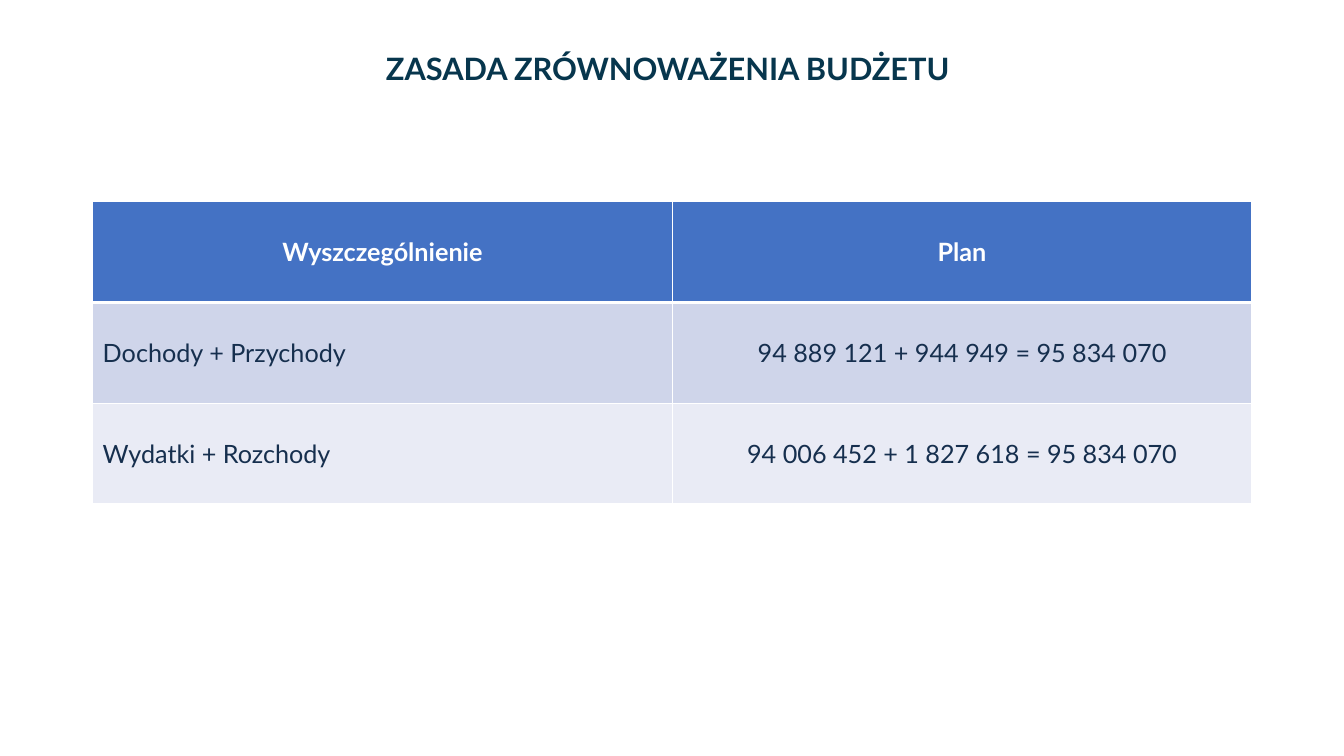
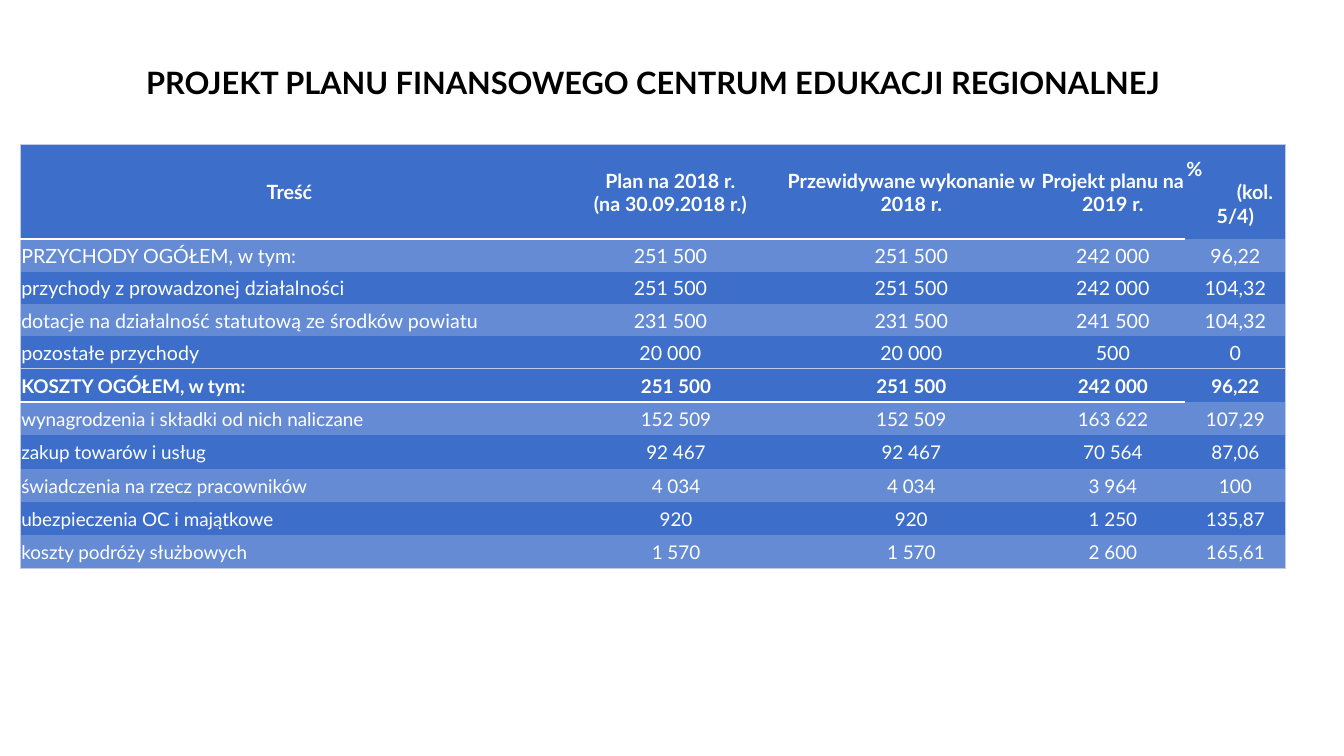
"""Build two budget slides with a title and plain tables."""
from dataclasses import dataclass
from typing import Optional

from lxml import etree
from pptx import Presentation
from pptx.dml.color import RGBColor
from pptx.enum.text import MSO_ANCHOR, PP_ALIGN
from pptx.oxml.ns import qn
from pptx.slide import Slide
from pptx.table import Table, _Cell
from pptx.util import Pt

LEFT, MID = PP_ALIGN.LEFT, PP_ALIGN.CENTER
CORE = MSO_ANCHOR.MIDDLE
FONT = "Lato"
HUES = {
    "white": "FFFFFF",
    "black": "000000",
    "teal": "07364D",
    "navy": "162F4E",
    "blue": "4472C4",
    "lilac": "CFD5EA",
    "pale": "E9EBF5",
    "royal": "3D6EC9",
    "sky": "648BD4",
    "mist": "C1C9E4",
}


@dataclass(frozen=True)
class Edge:
    """Colour and width of a cell border."""
    hue: str
    width: float


@dataclass(frozen=True)
class Title:
    """Heading text, its colour and the centre of its box."""
    text: str
    hue: str
    x: float
    y: float


@dataclass(frozen=True)
class Grid:
    """Place, look and text of a table."""
    left: float
    top: float
    cols: list[float]
    highs: list[float]
    cells: list[list[str]]
    fills: tuple[str, str, str]
    ink: str
    size: float
    rim: Edge
    rule: Edge
    span: int
    inner: Optional[Edge] = None
    inset: Optional[float] = None
    mid: bool = True


def color(name: str) -> RGBColor:
    """Return a named colour."""
    return RGBColor.from_string(HUES[name])


def add_title(slide: Slide, title: Title) -> None:
    """Draw a bold heading centred on its point."""
    width, high = 828, 40
    box = slide.shapes.add_textbox(Pt(title.x - width / 2), Pt(title.y - high / 2), Pt(width), Pt(high))
    frame = box.text_frame
    frame.word_wrap = True
    frame.vertical_anchor = CORE
    para = frame.paragraphs[0]
    para.text = title.text
    para.alignment = MID
    para.font.name, para.font.size, para.font.bold = FONT, Pt(22), True
    para.font.color.rgb = color(title.hue)


def add_edge(cell: _Cell, side: str, edge: Optional[Edge]) -> None:
    """Set one border of a cell, or clear it."""
    line = etree.SubElement(cell._tc.get_or_add_tcPr(), qn(f"a:ln{side}"))
    if edge is None:
        etree.SubElement(line, qn("a:noFill"))
        return
    line.set("w", str(int(Pt(edge.width))))
    fill = etree.SubElement(line, qn("a:solidFill"))
    etree.SubElement(fill, qn("a:srgbClr")).set("val", HUES[edge.hue])


def pick_row(grid: Grid, bound: int, col: int) -> Optional[Edge]:
    """Return the horizontal border at a row boundary."""
    if bound in (0, len(grid.highs)):
        return grid.rim
    return grid.rule if bound == 1 and col < grid.span else grid.inner


def pick_col(grid: Grid, bound: int) -> Optional[Edge]:
    """Return the vertical border at a column boundary."""
    return grid.rim if bound in (0, len(grid.cols)) else grid.inner


def fill_cell(cell: _Cell, grid: Grid, row: int, col: int) -> None:
    """Write and style one cell by its place."""
    add_edge(cell, "L", pick_col(grid, col))
    add_edge(cell, "R", pick_col(grid, col + 1))
    add_edge(cell, "T", pick_row(grid, row, col))
    add_edge(cell, "B", pick_row(grid, row + 1, col))
    cell.fill.solid()
    cell.fill.fore_color.rgb = color(grid.fills[1 + (row - 1) % 2 if row else 0])
    cell.vertical_anchor = CORE
    if grid.inset is not None:
        cell.margin_left = cell.margin_right = cell.margin_top = Pt(grid.inset)
        cell.margin_bottom = 0
    cell.text = grid.cells[row][col]
    for para in cell.text_frame.paragraphs:
        para.alignment = MID if col or (row == 0 and grid.mid) else LEFT
        para.font.name, para.font.size, para.font.bold = FONT, Pt(grid.size), row == 0
        para.font.color.rgb = color(grid.ink if row else "white")


def add_grid(slide: Slide, grid: Grid) -> Table:
    """Draw a table and return it."""
    frame = slide.shapes.add_table(
        len(grid.highs), len(grid.cols), Pt(grid.left), Pt(grid.top),
        Pt(sum(grid.cols)), Pt(sum(grid.highs)))
    table = frame.table
    table.first_row = table.horz_banding = False
    for col, width in enumerate(grid.cols):
        table.columns[col].width = Pt(width)
    for row, high in enumerate(grid.highs):
        table.rows[row].height = Pt(high)
        for col in range(len(grid.cols)):
            fill_cell(table.cell(row, col), grid, row, col)
    return table


def step_text(cell: _Cell) -> None:
    """Stagger the first two lines of the ratio heading."""
    first, second = cell.text_frame.paragraphs[:2]
    first.alignment = second.alignment = LEFT
    props = second._p.get_or_add_pPr()
    props.set("marL", str(int(Pt(36))))
    props.set("indent", "0")


THIN = Edge("white", 1)
RIM = Edge("mist", 0.5)
RULE = Edge("white", 1.5)
BANDS = ("royal", "sky", "royal")
TAIL = [184.3, 103.7, 71.3]

BALANCE = Grid(
    66.2, 144, [414, 414], [72] * 3,
    [
        ["Wyszczególnienie", "Plan"],
        ["Dochody + Przychody", "94 889 121 + 944 949 = 95 834 070"],
        ["Wydatki + Rozchody", "94 006 452 + 1 827 618 = 95 834 070"],
    ],
    ("blue", "lilac", "pale"), "navy", 18, THIN, Edge("white", 3), 2, inner=THIN)

INCOME = Grid(
    14.5, 103, [384.5, 159.8, *TAIL], [68, *[23.1] * 4],
    [
        ["Treść", "Plan na 2018 r.\v(na 30.09.2018 r.)", "Przewidywane wykonanie w 2018 r.",
         "Projekt planu na 2019 r.", "%\n(kol.\n5/4)"],
        ["PRZYCHODY OGÓŁEM, w tym:", "251 500", "251 500", "242 000", "96,22"],
        ["przychody z prowadzonej działalności", "251 500", "251 500", "242 000", "104,32"],
        ["dotacje na działalność statutową ze środków powiatu", "231 500", "231 500", "241 500", "104,32"],
        ["pozostałe przychody", "20 000", "20 000", "500", "0"],
    ],
    BANDS, "white", 14, RIM, RULE, 4, inset=0.7)

COSTS = Grid(
    14.5, 263.4, [392.4, 151.9, *TAIL], [23.8] * 6,
    [
        ["KOSZTY OGÓŁEM, w tym:", "251 500", "251 500", "242 000", "96,22"],
        ["wynagrodzenia i składki od nich naliczane", "152 509", "152 509", "163 622", "107,29"],
        ["zakup towarów i usług", "92 467", "92 467", "70 564", "87,06"],
        ["świadczenia na rzecz pracowników", "4 034", "4 034", "3 964", "100"],
        ["ubezpieczenia OC i majątkowe", "920", "920", "1 250", "135,87"],
        ["koszty podróży służbowych", "1 570", "1 570", "2 600", "165,61"],
    ],
    BANDS, "white", 13.5, RIM, RULE, 4, inset=0.7, mid=False)


def main() -> None:
    """Build and save the deck."""
    deck = Presentation()
    deck.slide_width, deck.slide_height = Pt(960), Pt(540)
    blank = deck.slide_layouts[6]

    slide = deck.slides.add_slide(blank)
    add_title(slide, Title("ZASADA ZRÓWNOWAŻENIA BUDŻETU", "teal", 477, 49))
    add_grid(slide, BALANCE)

    slide = deck.slides.add_slide(blank)
    add_title(slide, Title("PROJEKT PLANU FINANSOWEGO CENTRUM EDUKACJI REGIONALNEJ", "black", 466.5, 58.5))
    table = add_grid(slide, INCOME)
    step_text(table.cell(0, 4))
    add_grid(slide, COSTS)

    deck.save("out.pptx")


if __name__ == "__main__":
    main()
